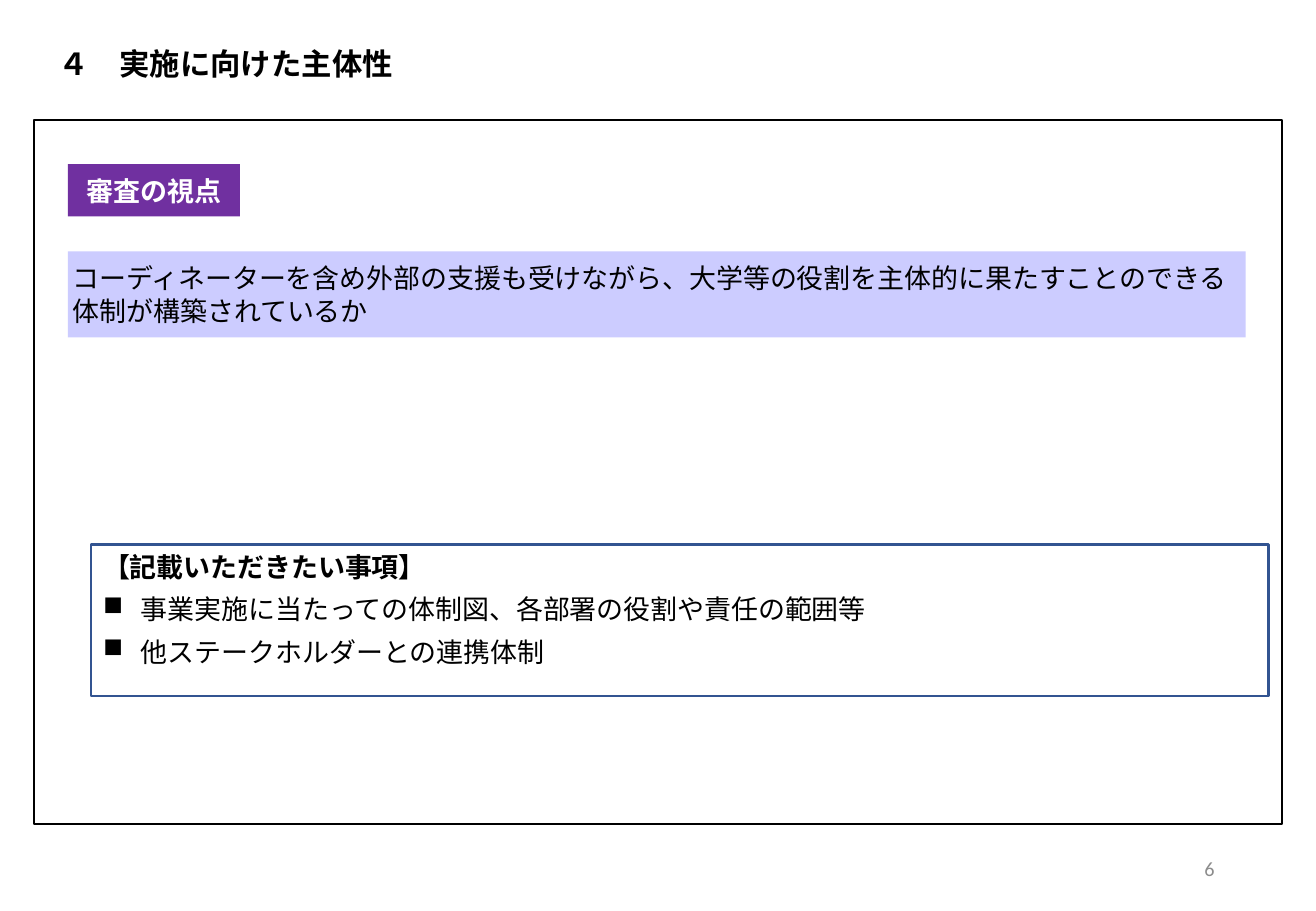
"""Build the slide on ownership of the implementation."""
import dataclasses
import typing

import lxml.etree
import pptx
import pptx.dml.color
import pptx.enum.shapes
import pptx.enum.text
import pptx.oxml.ns
import pptx.util

Pt = pptx.util.Pt
ALIGN = pptx.enum.text.PP_ALIGN
ANCHOR = pptx.enum.text.MSO_ANCHOR

COLOURS = {
    "black": "000000",
    "white": "FFFFFF",
    "purple": "7030A0",
    "lavender": "CCCCFF",
    "blue": "325491",
    "grey": "8C8C8C",
}
BULLET_INDENT = 22.5
SPACE_BETWEEN = 6


@dataclasses.dataclass(frozen=True)
class Line:
    text: str
    size: float = 16
    bold: bool = False
    font: str = "Arial"
    colour: str = "black"
    align: ALIGN = ALIGN.LEFT
    bullet: bool = False


@dataclasses.dataclass(frozen=True)
class Box:
    left: float
    top: float
    width: float
    height: float
    lines: tuple[Line, ...] = ()
    fill: typing.Optional[str] = None
    outline: typing.Optional[str] = None
    outline_width: float = 1
    anchor: ANCHOR = ANCHOR.MIDDLE
    margin_x: float = 2.83
    margin_y: float = 2.83


TITLE = Box(32, 23, 292, 29, (Line("４　実施に向けた主体性", 18, True, "Calibri"),))
PAGE_NUMBER = Box(551, 500.4, 176, 29,
                  (Line("6", 12, font="Calibri", colour="grey", align=ALIGN.RIGHT),),
                  margin_x=7.2, margin_y=3.6)
PANELS = (
    Box(20, 71.3, 740, 417, fill="white", outline="black"),
    Box(40.3, 149, 698, 51,
        (Line("コーディネーターを含め外部の支援も受けながら、大学等の役割を主体的に果たすことのできる体制が構築されているか"),),
        fill="lavender"),
    Box(40.3, 97.3, 102, 31,
        (Line("審査の視点", bold=True, colour="white", align=ALIGN.CENTER),), fill="purple"),
    Box(54, 322.6, 698, 90,
        (Line("【記載いただきたい事項】", bold=True),
         Line("事業実施に当たっての体制図、各部署の役割や責任の範囲等", bullet=True),
         Line("他ステークホルダーとの連携体制", bullet=True)),
        fill="white", outline="blue", outline_width=1.5,
        anchor=ANCHOR.TOP, margin_x=7.2, margin_y=3.6),
)


def rgb(name: str) -> pptx.dml.color.RGBColor:
    """Return the named colour."""
    return pptx.dml.color.RGBColor.from_string(COLOURS[name])


def set_all(target: typing.Any, values: dict[str, typing.Any]) -> None:
    """Set every attribute given in values."""
    for name, value in values.items():
        setattr(target, name, value)


def add_bullet(paragraph: typing.Any) -> None:
    """Give the paragraph a square bullet with a hanging indent."""
    properties = paragraph._p.get_or_add_pPr()
    properties.set("marL", str(Pt(BULLET_INDENT)))
    properties.set("indent", str(-Pt(BULLET_INDENT)))
    bullet = lxml.etree.SubElement(properties, pptx.oxml.ns.qn("a:buChar"))
    bullet.set("char", "■")


def write_lines(shape: typing.Any, box: Box) -> None:
    """Write the lines of the box into the shape."""
    frame = shape.text_frame
    set_all(frame, {
        "word_wrap": True,
        "auto_size": pptx.enum.text.MSO_AUTO_SIZE.NONE,
        "vertical_anchor": box.anchor,
        "margin_left": Pt(box.margin_x),
        "margin_right": Pt(box.margin_x),
        "margin_top": Pt(box.margin_y),
        "margin_bottom": Pt(box.margin_y),
    })
    for index, line in enumerate(box.lines):
        paragraph = frame.add_paragraph() if index else frame.paragraphs[0]
        paragraph.alignment = line.align
        if index:
            paragraph.space_before = Pt(SPACE_BETWEEN)
        if line.bullet:
            add_bullet(paragraph)
        run = paragraph.add_run()
        run.text = line.text
        set_all(run.font, {"name": line.font, "size": Pt(line.size), "bold": line.bold})
        run.font.color.rgb = rgb(line.colour)


def bounds(box: Box) -> dict[str, int]:
    """Return the place and size of the box as lengths."""
    return {name: Pt(getattr(box, name)) for name in ("left", "top", "width", "height")}


def add_panel(slide: typing.Any, box: Box) -> None:
    """Draw a filled rectangle with its text."""
    shape = slide.shapes.add_shape(
        pptx.enum.shapes.MSO_SHAPE.RECTANGLE, **bounds(box))
    shape.shadow.inherit = False
    shape.fill.solid()
    shape.fill.fore_color.rgb = rgb(box.fill)
    if box.outline:
        shape.line.color.rgb = rgb(box.outline)
        shape.line.width = Pt(box.outline_width)
    else:
        shape.line.fill.background()
    write_lines(shape, box)


def main() -> None:
    """Build and save the presentation."""
    presentation = pptx.Presentation()
    set_all(presentation, {"slide_width": Pt(780), "slide_height": Pt(540)})
    slide = presentation.slides.add_slide(
        presentation.slide_layouts.get_by_name("Title Only"))
    set_all(slide.shapes.title, bounds(TITLE))
    write_lines(slide.shapes.title, TITLE)
    for panel in PANELS:
        add_panel(slide, panel)
    write_lines(slide.shapes.add_textbox(**bounds(PAGE_NUMBER)), PAGE_NUMBER)
    presentation.save("out.pptx")


if __name__ == "__main__":
    main()
